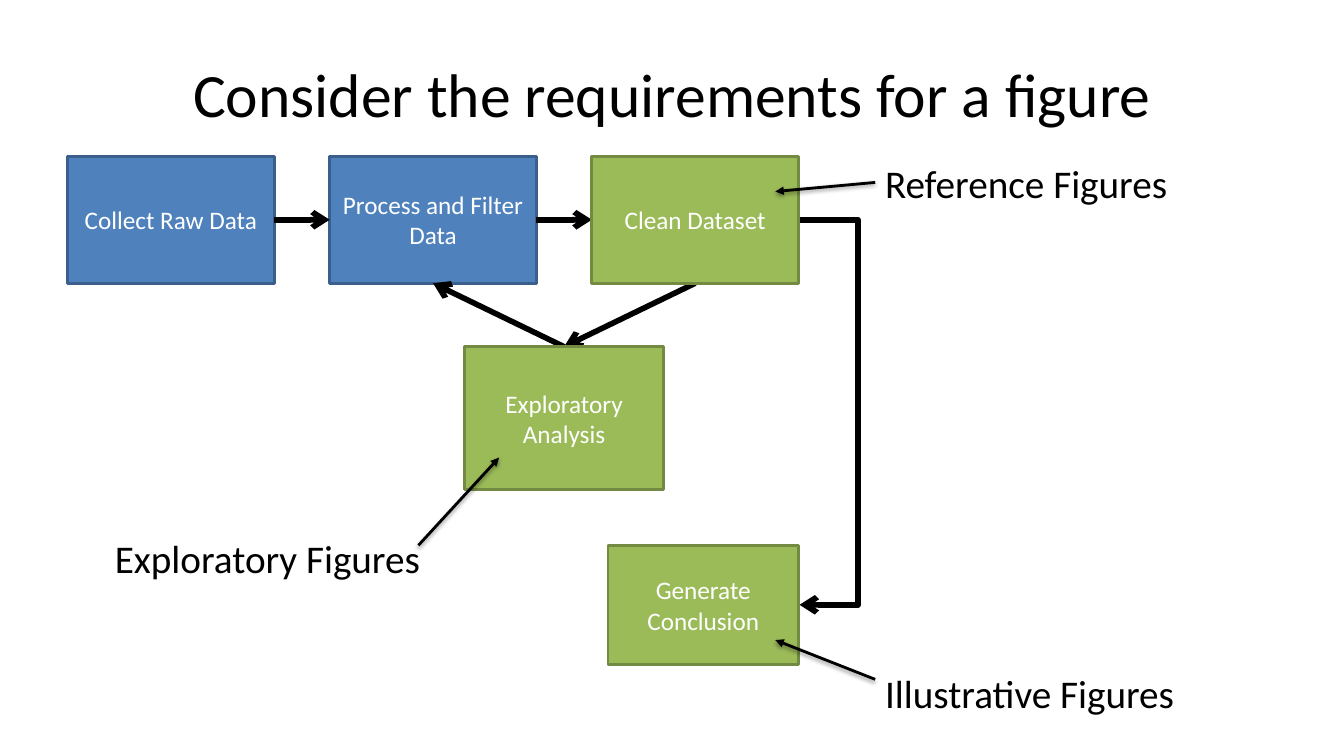
from lxml.etree import SubElement
from pptx import Presentation
from pptx.dml.color import RGBColor
from pptx.enum.shapes import MSO_CONNECTOR, MSO_SHAPE
from pptx.enum.text import MSO_ANCHOR, MSO_AUTO_SIZE, PP_ALIGN
from pptx.oxml.ns import qn
from pptx.util import Inches, Pt

FONT = "Calibri"
BLACK = RGBColor(0x00, 0x00, 0x00)
WHITE = RGBColor(0xFF, 0xFF, 0xFF)
BLUE = RGBColor(0x4F, 0x81, 0xBD)
BLUE_EDGE = RGBColor(0x3A, 0x5F, 0x8C)
GREEN = RGBColor(0x9B, 0xBB, 0x59)
GREEN_EDGE = RGBColor(0x73, 0x8A, 0x42)

# Top row of equal steps
STEP_LEFT, STEP_TOP, STEP_W, STEP_H, STEP_PITCH = 0.67, 1.55, 2.05, 1.26, 2.6
TOP, LEFT, BOTTOM, RIGHT = range(4)


def add_run(p, text, size, color):
    r = p.add_run()
    r.text = text
    r.font.name = FONT
    r.font.size = Pt(size)
    r.font.color.rgb = color


def add_text(s, text, x, y, w, h, size):
    sp = s.shapes.add_textbox(Inches(x), Inches(y), Inches(w), Inches(h))
    add_run(sp.text_frame.paragraphs[0], text, size, BLACK)
    return sp.text_frame


def add_title(s, text):
    tf = add_text(s, text, 0.67, 0.3, 12, 1.25, 44)
    tf.word_wrap = True
    tf.vertical_anchor = MSO_ANCHOR.MIDDLE
    tf.paragraphs[0].alignment = PP_ALIGN.CENTER


def add_box(s, text, x, y, w, h, fill, edge):
    sp = s.shapes.add_shape(MSO_SHAPE.RECTANGLE, Inches(x), Inches(y), Inches(w), Inches(h))
    sp.shadow.inherit = False
    sp.fill.solid()
    sp.fill.fore_color.rgb = fill
    sp.line.color.rgb = edge
    sp.line.width = Pt(2)
    tf = sp.text_frame
    tf.word_wrap = True
    tf.vertical_anchor = MSO_ANCHOR.MIDDLE
    p = tf.paragraphs[0]
    p.alignment = PP_ALIGN.CENTER
    add_run(p, text, 18, WHITE)
    return sp


def add_step(s, index, text, fill, edge):
    return add_box(s, text, STEP_LEFT + index * STEP_PITCH, STEP_TOP, STEP_W, STEP_H, fill, edge)


def add_arrow(s, start=(0, 0), end=(0, 0), width=4, head="arrow", kind=MSO_CONNECTOR.STRAIGHT):
    cxn = s.shapes.add_connector(kind, *map(Inches, start + end))
    cxn.line.color.rgb = BLACK
    cxn.line.width = Pt(width)
    SubElement(cxn.line._get_or_add_ln(), qn("a:tailEnd"), type=head)
    SubElement(cxn._element.spPr, qn("a:effectLst"))
    return cxn


def add_elbow(s, start, end, bend_x):
    cxn = add_arrow(s, start, end, kind=MSO_CONNECTOR.ELBOW)
    ratio = (bend_x - start[0]) / (end[0] - start[0])
    guides = cxn._element.spPr.find(qn("a:prstGeom")).get_or_add_avLst()
    SubElement(guides, qn("a:gd"), name="adj1", fmla=f"val {round(ratio * 100000)}")


def add_callout(s, text, box, start, end):
    tf = add_text(s, text, *box, 28)
    tf.word_wrap = False
    tf.auto_size = MSO_AUTO_SIZE.SHAPE_TO_FIT_TEXT
    pointer = add_arrow(s, start, end, 2, "triangle")
    # Soft shadow below the pointer
    effects = pointer._element.spPr.find(qn("a:effectLst"))
    shadow = SubElement(effects, qn("a:outerShdw"), blurRad=str(Pt(3.1)), dist=str(Pt(1.6)),
                        dir="5400000", rotWithShape="0")
    color = SubElement(shadow, qn("a:srgbClr"), val=str(BLACK))
    SubElement(color, qn("a:alpha"), val="38000")


def main():
    prs = Presentation()
    prs.slide_width, prs.slide_height = Inches(13.33), Inches(7.5)
    s = prs.slides.add_slide(prs.slide_layouts[6])

    # Data preparation steps
    collect = add_step(s, 0, "Collect Raw Data", BLUE, BLUE_EDGE)
    process = add_step(s, 1, "Process and Filter Data", BLUE, BLUE_EDGE)

    # Arrows lie behind the green boxes and are joined below
    arrows = [add_arrow(s) for _ in range(4)]
    add_elbow(s, (7.92, 2.18), (7.93, 6), 8.52)

    add_title(s, "Consider the requirements for a figure")

    # Steps that need figures
    clean = add_step(s, 2, "Clean Dataset", GREEN, GREEN_EDGE)
    explore = add_box(s, "Exploratory Analysis", 4.61, 3.44, 1.97, 1.42, GREEN, GREEN_EDGE)
    add_box(s, "Generate Conclusion", 6.03, 5.41, 1.89, 1.18, GREEN, GREEN_EDGE)

    # Flow between the steps
    flow = [
        (collect, RIGHT, process, LEFT),
        (process, RIGHT, clean, LEFT),
        (clean, BOTTOM, explore, TOP),
        (explore, TOP, process, BOTTOM),
    ]
    for arrow, (source, out_side, target, in_side) in zip(arrows, flow):
        arrow.begin_connect(source, out_side)
        arrow.end_connect(target, in_side)

    # Kinds of figure
    add_callout(s, "Exploratory Figures", (1.04, 5.25, 3.26, 0.57), (4.15, 5.41), (4.95, 4.54))
    add_callout(s, "Illustrative Figures", (8.68, 6.59, 3.1, 0.57), (8.68, 6.74), (7.69, 6.35))
    add_callout(s, "Reference Figures", (8.68, 1.53, 3.03, 0.57), (8.68, 1.81), (7.69, 1.9))

    prs.save("out.pptx")


if __name__ == "__main__":
    main()
